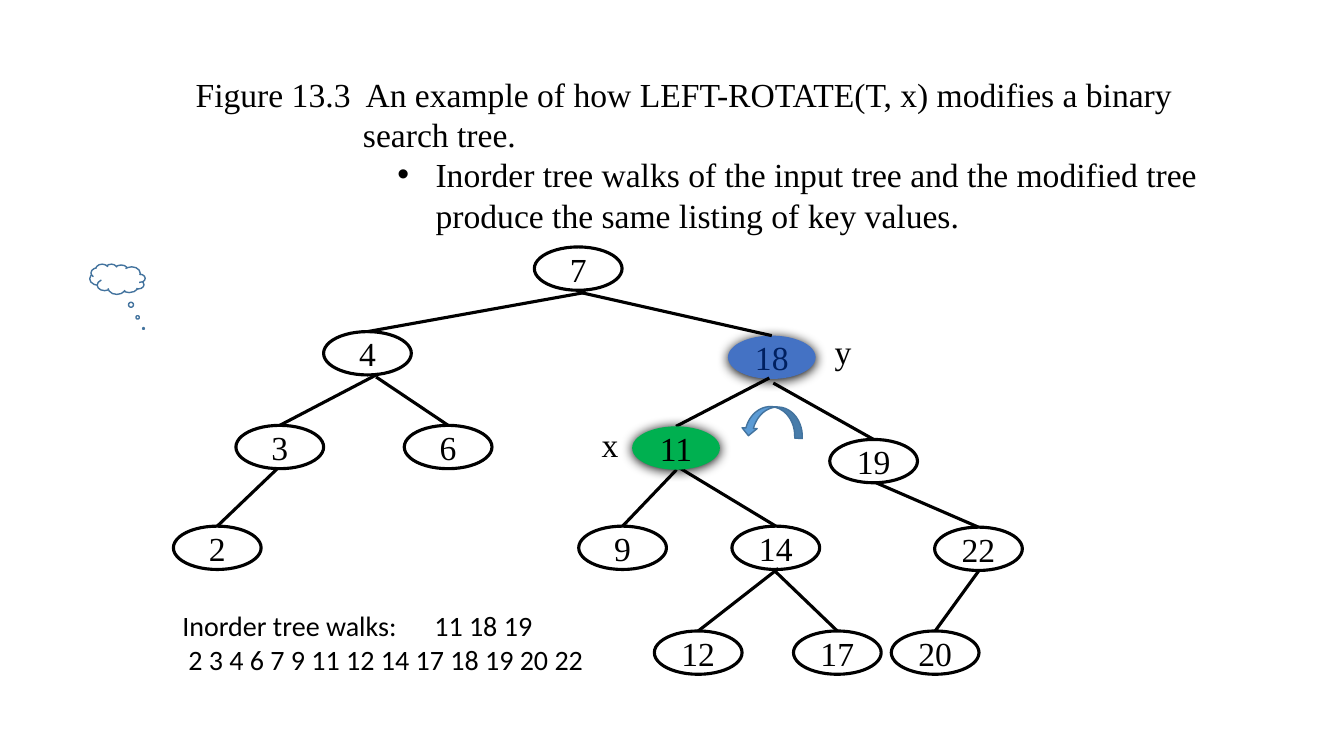
from dataclasses import dataclass

from lxml.etree import SubElement
from pptx import Presentation
from pptx.dml.color import RGBColor
from pptx.enum.shapes import MSO_CONNECTOR as Connector, MSO_SHAPE as Preset
from pptx.enum.text import MSO_ANCHOR as Anchor, MSO_AUTO_SIZE as AutoSize, PP_ALIGN as Align
from pptx.oxml.ns import qn
from pptx.util import Inches, Pt


@dataclass(frozen=True)
class Theme:
    black: str = "000000"
    white: str = "FFFFFF"
    navy: str = "002060"
    blue: str = "4472C4"
    green: str = "00B050"
    arrow: str = "5B9BD5"
    outline: str = "43739E"
    serif: str = "Times New Roman"
    sans: str = "Calibri"
    main_size: int = 24
    note_size: int = 20
    tree_line: float = 2.25
    thin_line: float = 1


THEME = Theme()
NODE_WIDTH, NODE_HEIGHT = 0.87, 0.43
NODES = {
    "7": (5.3, 2.45), "4": (3.21, 3.29), "18": (7.22, 3.33),
    "3": (2.34, 4.22), "6": (4.01, 4.22), "2": (1.72, 5.22),
    "9": (5.74, 5.22), "14": (7.26, 5.22), "19": (8.23, 4.36),
    "12": (6.49, 6.26), "17": (7.87, 6.26), "22": (9.27, 5.23),
    "20": (8.84, 6.26), "11": (6.27, 4.23),
}
EDGE_STARTS = {
    "18": (5.75, 2.9), "11": (7.63, 3.75), "4": (5.81, 2.9),
    "9": (6.71, 4.66), "12": (7.72, 5.64), "17": (7.67, 5.65),
    "14": (6.72, 4.63), "19": (7.67, 3.8), "22": (8.69, 4.79),
    "20": (9.71, 5.66), "3": (3.75, 3.71), "2": (2.75, 4.65),
    "6": (3.73, 3.74),
}
HIGHLIGHTS = {"18": (THEME.blue, THEME.navy), "11": (THEME.green, THEME.black)}
FRAME_FORMAT = {"word_wrap": True, "auto_size": AutoSize.SHAPE_TO_FIT_TEXT,
                "vertical_anchor": Anchor.TOP}
NODE_FORMAT = {"alignment": Align.CENTER, "space_after": Pt(8)}
TEXT_FORMAT = {"alignment": Align.LEFT, "line_spacing": 1.0,
               "space_before": Pt(0), "space_after": Pt(0)}


def apply(target, values):
    for name, value in values.items():
        setattr(target, name, value)


class TreeSlide:
    def __init__(self, presentation, theme):
        self.theme = theme
        self.slide = presentation.slides.add_slide(presentation.slide_layouts[5])
        self.shapes = self.slide.shapes

    def add_text(self, paragraph, text, font=None, size=None, color=None):
        run = paragraph.add_run()
        run.text = text
        apply(run.font, {"name": font or self.theme.serif,
                         "size": Pt(size or self.theme.main_size)})
        run.font.color.rgb = RGBColor.from_string(color or self.theme.black)

    def fill_frame(self, frame, lines, **style):
        apply(frame, FRAME_FORMAT)
        for index, line in enumerate(lines):
            paragraph = frame.add_paragraph() if index else frame.paragraphs[0]
            apply(paragraph, TEXT_FORMAT)
            self.add_text(paragraph, line, **style)
        return frame.paragraphs

    def indent(self, paragraph, margin, first=0, bullet=None, tab=None):
        properties = paragraph._p.get_or_add_pPr()
        properties.set("marL", str(Inches(margin)))
        properties.set("indent", str(Inches(first)))
        if bullet:
            SubElement(properties, qn("a:buFont"), typeface="Arial")
            SubElement(properties, qn("a:buChar"), char=bullet)
        if tab:
            tabs = SubElement(properties, qn("a:tabLst"))
            SubElement(tabs, qn("a:tab"), pos=str(Inches(tab)), algn="l")

    def title(self, box, lines):
        title = self.shapes.title
        apply(title, dict(zip(("left", "top", "width", "height"), map(Inches, box))))
        return self.fill_frame(title.text_frame, lines)

    def text(self, box, lines, **style):
        textbox = self.shapes.add_textbox(*map(Inches, box))
        return self.fill_frame(textbox.text_frame, lines, **style)

    def shape(self, preset, box, fill, line=None, width=None):
        shape = self.shapes.add_shape(preset, *map(Inches, box))
        shape.shadow.inherit = False
        shape.fill.solid()
        shape.fill.fore_color.rgb = RGBColor.from_string(fill)
        if line:
            shape.line.color.rgb = RGBColor.from_string(line)
            shape.line.width = Pt(width)
        else:
            shape.line.fill.background()
        return shape

    def add_shadow(self, shape):
        effects = shape._element.spPr.find(qn("a:effectLst"))
        shadow = SubElement(effects, qn("a:outerShdw"), blurRad=str(Pt(8.5)),
                            dist=str(Pt(1)), dir="5400000", rotWithShape="0")
        SubElement(shadow, qn("a:srgbClr"), val=self.theme.black)

    def node(self, key):
        box = (*NODES[key], NODE_WIDTH, NODE_HEIGHT)
        color = self.theme.black
        if key in HIGHLIGHTS:
            fill, color = HIGHLIGHTS[key]
            shape = self.shape(Preset.OVAL, box, fill)
            self.add_shadow(shape)
        else:
            shape = self.shape(Preset.OVAL, box, self.theme.white,
                               self.theme.black, self.theme.tree_line)
        shape.text_frame.vertical_anchor = Anchor.MIDDLE
        paragraph = shape.text_frame.paragraphs[0]
        apply(paragraph, NODE_FORMAT)
        self.add_text(paragraph, key, color=color)

    def edge(self, start, child):
        left, top = NODES[child]
        points = (*start, left + NODE_WIDTH / 2, top)
        connector = self.shapes.add_connector(Connector.STRAIGHT, *map(Inches, points))
        connector.line.color.rgb = RGBColor.from_string(self.theme.black)
        connector.line.width = Pt(self.theme.tree_line)
        SubElement(connector._element.spPr, qn("a:effectLst"))


def main():
    presentation = Presentation()
    apply(presentation, {"slide_width": Inches(13.33), "slide_height": Inches(7.5)})
    tree = TreeSlide(presentation, THEME)

    caption = tree.title((1.84, 0.68, 10.43, 1.72), [
        "Figure 13.3  An example of how LEFT-ROTATE(T, x) modifies a binary",
        "search tree.",
        "Inorder tree walks of the input tree and the modified tree "
        "produce the same listing of key values.",
    ])
    tree.indent(caption[1], 1.66)
    tree.indent(caption[2], 2.38, -0.38, bullet="•")

    for key in NODES:
        if key != "11":
            tree.node(key)
    for child, start in EDGE_STARTS.items():
        tree.edge(start, child)
    tree.node("11")

    tree.text((8.18, 3.23, 0.48, 0.5), ["y"])
    tree.text((5.87, 4.16, 0.5, 0.5), ["x"])

    rotation = tree.shape(Preset.CURVED_RIGHT_ARROW, (7.51, 3.88, 0.3, 0.61),
                          THEME.arrow, THEME.outline, THEME.thin_line)
    rotation.rotation = 93
    cloud = tree.shape(Preset.CLOUD_CALLOUT, (0.89, 2.62, 0.55, 0.3),
                       THEME.white, THEME.outline, THEME.thin_line)
    cloud.adjustments[0], cloud.adjustments[1] = -0.47, 1.63
    cloud._element.spPr.xfrm.set("flipH", "1")

    walks = tree.text((1.71, 5.99, 4.24, 0.77),
                      ["Inorder tree walks:\t11 18 19",
                       "2 3 4 6 7 9 11 12 14 17 18 19 20 22"],
                      font=THEME.sans, size=THEME.note_size)
    tree.indent(walks[0], 0, tab=2.32)
    tree.indent(walks[1], 0.06)

    presentation.save("out.pptx")


if __name__ == "__main__":
    main()
